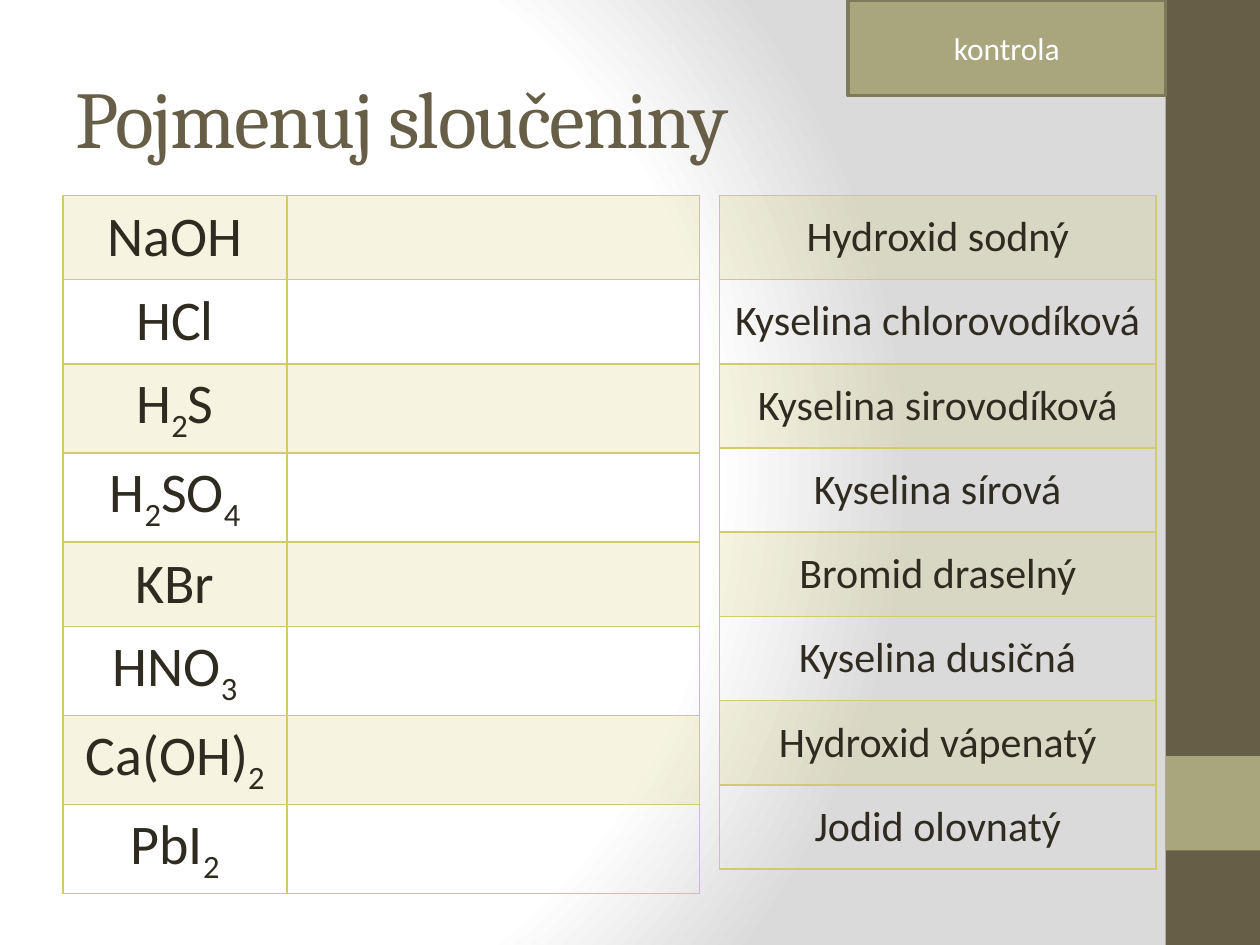
from dataclasses import dataclass
from itertools import groupby

from lxml import etree
from pptx import Presentation
from pptx import util as u
from pptx.dml.color import RGBColor
from pptx.enum import shapes, text
from pptx.oxml import ns

BROWN, OLIVE, OLIVE_DARK = "675E47", "A9A57C", "7D7A5C"
YELLOW, INK, WHITE, GREY = "D2CB6C", "2F2B20", "FFFFFF", "DADADA"
BODY_FONT, TITLE_FONT = "Calibri", "Cambria"
TABLE_TOP, ROW_HEIGHT = 111.6, 48.15

COMPOUNDS = [
    ("NaOH", "Hydroxid sodný"),
    ("HCl", "Kyselina chlorovodíková"),
    ("H2S", "Kyselina sirovodíková"),
    ("H2SO4", "Kyselina sírová"),
    ("KBr", "Bromid draselný"),
    ("HNO3", "Kyselina dusičná"),
    ("Ca(OH)2", "Hydroxid vápenatý"),
    ("PbI2", "Jodid olovnatý"),
]


@dataclass
class Box:
    left: float
    top: float
    width: float
    height: float
    fill: str
    line: str | None = None


@dataclass
class TableLayout:
    left: float
    column_widths: list[float]
    size: float
    entries: list[str]


def color(value: str) -> RGBColor:
    return RGBColor.from_string(value)


def add_child(parent, tag: str, **attributes: str):
    child = etree.SubElement(parent, ns.qn(tag))
    for name, value in attributes.items():
        child.set(name, value)
    return child


def add_run(paragraph, content: str, size: float, font: str, ink: str):
    run = paragraph.add_run()
    run.text = content
    run.font.size = u.Pt(size)
    run.font.name = font
    run.font.color.rgb = color(ink)
    return run


def add_formula(paragraph, formula: str, size: float) -> None:
    """Write a formula with its digits as subscripts."""
    for is_digit, letters in groupby(formula, str.isdigit):
        run = add_run(paragraph, "".join(letters), size, BODY_FONT, INK)
        if is_digit:
            run.font._element.set("baseline", "-25000")


def draw_background(slide) -> None:
    slide.background.fill.gradient()
    gradient = slide.element.find(".//" + ns.qn("a:gradFill"))
    for child in list(gradient):
        gradient.remove(child)
    stops = add_child(gradient, "a:gsLst")
    for position, value in ((0, WHITE), (75, WHITE), (100, GREY)):
        stop = add_child(stops, "a:gs", pos=str(position * 1000))
        add_child(stop, "a:srgbClr", val=value)
    path = add_child(gradient, "a:path", path="circle")
    add_child(path, "a:fillToRect", l="20000", t="50000", r="100000", b="50000")


def draw_box(slide, box: Box):
    shape = slide.shapes.add_shape(
        shapes.MSO_SHAPE.RECTANGLE,
        u.Pt(box.left), u.Pt(box.top), u.Pt(box.width), u.Pt(box.height))
    shape.shadow.inherit = False
    shape.fill.solid()
    shape.fill.fore_color.rgb = color(box.fill)
    if box.line:
        shape.line.color.rgb = color(box.line)
        shape.line.width = u.Pt(2)
    else:
        shape.line.fill.background()
    return shape


def style_cell(cell, banded: bool) -> None:
    properties = cell._tc.get_or_add_tcPr()
    for side in ("a:lnL", "a:lnR", "a:lnT", "a:lnB"):
        border = add_child(properties, side, w=str(u.Pt(1)))
        add_child(add_child(border, "a:solidFill"), "a:srgbClr", val=YELLOW)
    cell.vertical_anchor = text.MSO_ANCHOR.MIDDLE
    if banded:
        cell.fill.solid()
        cell.fill.fore_color.rgb = color(YELLOW)
        tint = properties.find(ns.qn("a:solidFill"))[0]
        add_child(tint, "a:alpha", val="20000")
    else:
        cell.fill.background()


def draw_table(slide, layout: TableLayout) -> None:
    count = len(layout.entries)
    table = slide.shapes.add_table(
        count, len(layout.column_widths), u.Pt(layout.left), u.Pt(TABLE_TOP),
        u.Pt(sum(layout.column_widths)), u.Pt(count * ROW_HEIGHT)).table
    table.first_row = table.horz_banding = False
    for column, width in zip(table.columns, layout.column_widths):
        column.width = u.Pt(width)
    for index, (row, entry) in enumerate(zip(table.rows, layout.entries)):
        row.height = u.Pt(ROW_HEIGHT)
        for cell in row.cells:
            style_cell(cell, banded=index % 2 == 0)
        paragraph = row.cells[0].text_frame.paragraphs[0]
        paragraph.alignment = text.PP_ALIGN.CENTER
        add_formula(paragraph, entry, layout.size)


def draw_title(slide) -> None:
    title = slide.shapes.add_textbox(u.Pt(36), u.Pt(21.6), u.Pt(600), u.Pt(90))
    title.text_frame.word_wrap = True
    title.text_frame.vertical_anchor = text.MSO_ANCHOR.MIDDLE
    run = add_run(title.text_frame.paragraphs[0], "Pojmenuj sloučeniny",
                  46, TITLE_FONT, BROWN)
    run.font._element.set("spc", "-100")


def draw_button(slide) -> None:
    button = draw_box(slide, Box(484.6, 0, 181.4, 54.7, OLIVE, OLIVE_DARK))
    button.text_frame.vertical_anchor = text.MSO_ANCHOR.MIDDLE
    paragraph = button.text_frame.paragraphs[0]
    paragraph.alignment = text.PP_ALIGN.CENTER
    add_run(paragraph, "kontrola", 18, BODY_FONT, WHITE)


def main() -> None:
    presentation = Presentation()
    presentation.slide_width, presentation.slide_height = u.Pt(720), u.Pt(540)
    slide = presentation.slides.add_slide(presentation.slide_layouts[6])

    # Background and side band
    draw_background(slide)
    draw_box(slide, Box(666, 0, 54, 540, BROWN))
    draw_box(slide, Box(666, 432, 54, 54, OLIVE))

    # Title
    draw_title(slide)

    # Formulas to name, and the answers
    formulas, names = (list(column) for column in zip(*COMPOUNDS))
    draw_table(slide, TableLayout(36, [128, 235.6], 32, formulas))
    draw_table(slide, TableLayout(411.2, [249.3], 24, names))

    # Check button
    draw_button(slide)

    presentation.save("out.pptx")


if __name__ == "__main__":
    main()
